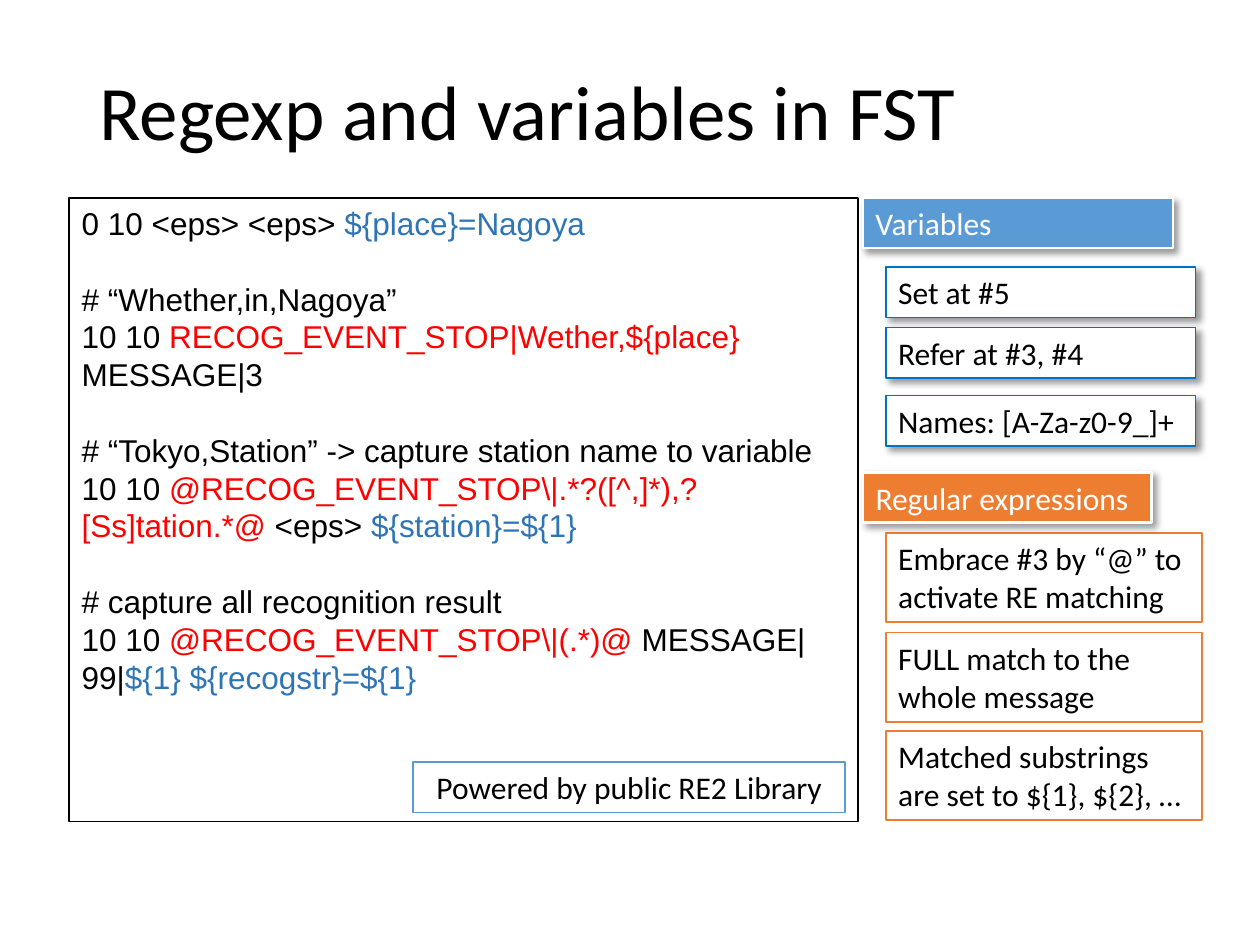
from dataclasses import dataclass

from lxml.etree import SubElement
from pptx import Presentation
from pptx.dml.color import RGBColor
from pptx.enum.shapes import MSO_SHAPE as Preset
from pptx.enum.text import MSO_ANCHOR as Anchor, PP_ALIGN as Align
from pptx.oxml.ns import qn
from pptx.util import Inches, Pt


@dataclass(frozen=True)
class Theme:
    black: str = "000000"
    white: str = "FFFFFF"
    red: str = "FF0000"
    code_blue: str = "2E75B6"
    note_blue: str = "0070C0"
    blue: str = "5B9BD5"
    orange: str = "ED7D31"
    text_font: str = "Calibri"
    code_font: str = "Arial"
    title_size: int = 44
    body_size: int = 18
    code_line: float = 21.6


theme = Theme()

TITLE = "Regexp and variables in FST"
CODE_BOX = (0.55, 1.57, 6.26, 4.95)
CODE_GROUPS = [
    [
        [("0 10 <eps> <eps> ", theme.black), ("${place}=Nagoya", theme.code_blue)],
    ],
    [
        [("# “Whether,in,Nagoya”", theme.black)],
        [
            ("10 10 ", theme.black),
            ("RECOG_EVENT_STOP|Wether,${place}", theme.red),
            (" MESSAGE|3", theme.black),
        ],
    ],
    [
        [("# “Tokyo,Station” -> capture station name to variable", theme.black)],
        [
            ("10 10 ", theme.black),
            ("@RECOG_EVENT_STOP\\|.*?([^,]*),?[Ss]tation.*@", theme.red),
            (" <eps> ", theme.black),
            ("${station}=${1}", theme.code_blue),
        ],
    ],
    [
        [("# capture all recognition result", theme.black)],
        [
            ("10 10 ", theme.black),
            ("@RECOG_EVENT_STOP\\|(.*)@ ", theme.red),
            ("MESSAGE|99|", theme.black),
            ("${1} ${recogstr}=${1}", theme.code_blue),
        ],
    ],
]
SECTIONS = [
    {
        "heading": "Variables", "top": 1.57, "width": 2.46, "fill": theme.blue,
        "note_line": theme.note_blue, "note_size": (2.46, 0.4), "shadow": True,
        "notes": [
            (2.12, "Set at #5"),
            (2.6, "Refer at #3, #4"),
            (3.14, "Names: [A-Za-z0-9_]+"),
        ],
    },
    {
        "heading": "Regular expressions", "top": 3.75, "width": 2.29, "fill": theme.orange,
        "note_line": theme.orange, "note_size": (2.51, 0.71), "shadow": False,
        "notes": [
            (4.23, "Embrace #3 by “@” to\nactivate RE matching"),
            (5.02, "FULL match to the whole message"),
            (5.8, "Matched substrings are set to ${1}, ${2}, …"),
        ],
    },
]
HEADING_LEFT, NOTE_LEFT, HEADING_HEIGHT = 6.85, 7.03, 0.4
BADGE = "Powered by public RE2 Library"
BADGE_BOX = (3.28, 6.05, 3.43, 0.4)


def rgb(color):
    return RGBColor.from_string(color)


def style_run(run, font, size, color):
    run.font.name = font
    run.font.size = Pt(size)
    run.font.color.rgb = rgb(color)


def write(paragraph, text, size=theme.body_size, color=theme.black, align=Align.LEFT):
    paragraph.text = text
    paragraph.alignment = align
    for run in paragraph.runs:
        style_run(run, theme.text_font, size, color)


def add_shadow(shape):
    effects = shape._element.spPr.find(qn("a:effectLst"))
    shadow = SubElement(effects, qn("a:outerShdw"), blurRad=str(Pt(4)), dist=str(Pt(3)),
                        dir=str(45 * 60000), algn="tl", rotWithShape="0")
    color = SubElement(shadow, qn("a:srgbClr"), val=theme.black)
    SubElement(color, qn("a:alpha"), val="40000")


def add_box(slide, box, line, fill=theme.white, line_width=1, shadow=False):
    shape = slide.shapes.add_shape(Preset.RECTANGLE, *map(Inches, box))
    shape.shadow.inherit = False
    shape.fill.solid()
    shape.fill.fore_color.rgb = rgb(fill)
    shape.line.color.rgb = rgb(line)
    shape.line.width = Pt(line_width)
    shape.text_frame.word_wrap = True
    shape.text_frame.vertical_anchor = Anchor.TOP
    if shadow:
        add_shadow(shape)
    return shape.text_frame


def add_title(slide):
    frame = slide.shapes.add_textbox(*map(Inches, (0.69, 0.4, 8.62, 1.03))).text_frame
    frame.word_wrap = True
    frame.vertical_anchor = Anchor.MIDDLE
    write(frame.paragraphs[0], TITLE, theme.title_size)
    frame.paragraphs[0].line_spacing = 0.9


def add_code(slide):
    frame = add_box(slide, CODE_BOX, theme.black)
    paragraph = frame.paragraphs[0]
    for group_index, group in enumerate(CODE_GROUPS):
        for line_index, line in enumerate(group):
            if group_index or line_index:
                paragraph = frame.add_paragraph()
            paragraph.alignment = Align.LEFT
            paragraph.line_spacing = Pt(theme.code_line)
            if group_index and line_index == 0:
                paragraph.space_before = Pt(theme.code_line)
            for text, color in line:
                run = paragraph.add_run()
                run.text = text
                style_run(run, theme.code_font, theme.body_size, color)


def add_section(slide, section):
    for top, text in section["notes"]:
        frame = add_box(slide, (NOTE_LEFT, top, *section["note_size"]),
                        section["note_line"], shadow=section["shadow"])
        write(frame.paragraphs[0], text)
    heading_box = (HEADING_LEFT, section["top"], section["width"], HEADING_HEIGHT)
    frame = add_box(slide, heading_box, theme.white, section["fill"], 1.5, True)
    write(frame.paragraphs[0], section["heading"], color=theme.white)


def main():
    presentation = Presentation()
    presentation.slide_width = Inches(10)
    presentation.slide_height = Inches(7.5)
    slide = presentation.slides.add_slide(presentation.slide_layouts[6])
    add_title(slide)
    add_code(slide)
    for section in SECTIONS:
        add_section(slide, section)
    badge = add_box(slide, BADGE_BOX, theme.blue)
    write(badge.paragraphs[0], BADGE, align=Align.CENTER)
    presentation.save("out.pptx")


if __name__ == "__main__":
    main()
